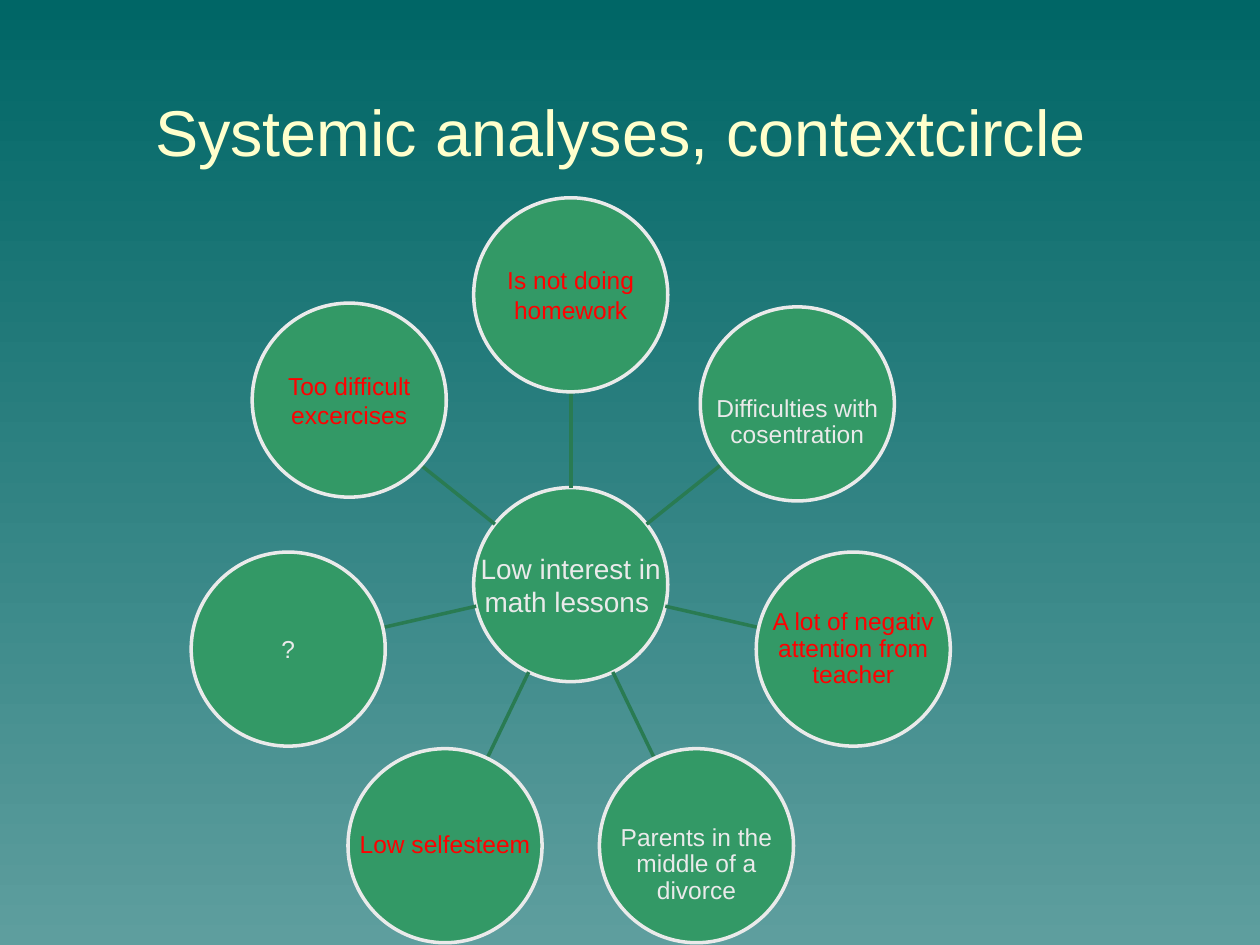
from dataclasses import dataclass
from math import cos, pi, sin

from lxml.etree import SubElement
from pptx import Presentation
from pptx.dml.color import RGBColor
from pptx.enum.shapes import MSO_CONNECTOR, MSO_SHAPE
from pptx.enum.text import MSO_ANCHOR, MSO_AUTO_SIZE, PP_ALIGN
from pptx.oxml.ns import qn
from pptx.util import Inches, Pt


@dataclass(frozen=True)
class Theme:
    font: str = "Arial"
    sky: str = "006666"
    ground: str = "5E9E9E"
    title: str = "FFFFCC"
    circle: str = "339966"
    light: str = "EAEAEA"
    accent: str = "FF0000"
    spoke: str = "297B52"
    title_size: float = 37
    hub_size: float = 16
    topic_size: float = 14
    line_width: float = 2


def assign(target, values):
    for name, value in values.items():
        setattr(target, name, value)


def color(value):
    return RGBColor.from_string(value)


class ContextCircle:
    def __init__(self, page, theme):
        self.page = page
        self.theme = theme

    def background(self):
        fill = self.page.background.fill
        fill.gradient()
        fill.gradient_angle = 270
        for stop, value in zip(fill.gradient_stops, (self.theme.sky, self.theme.ground)):
            stop.color.rgb = color(value)

    def label(self, box, text, size, ink, spacing=1.0, inset=0.01, drop=0):
        margin = Inches(inset)
        assign(box.text_frame, {
            "word_wrap": True,
            "auto_size": MSO_AUTO_SIZE.NONE,
            "vertical_anchor": MSO_ANCHOR.MIDDLE,
            "margin_left": margin,
            "margin_right": margin,
            "margin_top": Inches(inset + drop),
            "margin_bottom": margin,
        })
        para = box.text_frame.paragraphs[0]
        assign(para, {"alignment": PP_ALIGN.CENTER, "line_spacing": spacing})
        span = para.add_run()
        span.text = text
        assign(span.font, {"name": self.theme.font, "size": Pt(size), "bold": False})
        span.font.color.rgb = color(ink)

    def title(self, text, left, top, width, height):
        box = self.page.shapes.title
        assign(box, {
            "left": Inches(left),
            "top": Inches(top),
            "width": Inches(width),
            "height": Inches(height),
        })
        self.label(box, text, self.theme.title_size, self.theme.title)

    def circle(self, center, radius, text, size, ink, **layout):
        x, y = center
        frame = [Inches(value) for value in (x - radius, y - radius, 2 * radius, 2 * radius)]
        disc = self.page.shapes.add_shape(MSO_SHAPE.OVAL, *frame)
        disc.shadow.inherit = False
        disc.fill.solid()
        disc.fill.fore_color.rgb = color(self.theme.circle)
        disc.line.color.rgb = color(self.theme.light)
        disc.line.width = Pt(self.theme.line_width)
        box = self.page.shapes.add_textbox(*frame)
        self.label(box, text, size, ink, **layout)

    def spoke(self, start, end):
        ends = [Inches(value) for value in (*start, *end)]
        line = self.page.shapes.add_connector(MSO_CONNECTOR.STRAIGHT, *ends)
        line.line.color.rgb = color(self.theme.spoke)
        line.line.width = Pt(self.theme.line_width)
        SubElement(line._element.spPr, qn("a:effectLst"))


def around(center, distance, angle):
    return center[0] + distance * sin(angle), center[1] - distance * cos(angle)


def main():
    theme = Theme()
    deck = Presentation()
    assign(deck, {"slide_width": Inches(10), "slide_height": Inches(7.5)})
    chart = ContextCircle(deck.slides.add_slide(deck.slide_layouts[5]), theme)
    chart.background()
    chart.title("Systemic analyses, contextcircle", 0.51, 0.82, 8.83, 0.44)

    hub, radius, orbit = (4.53, 4.64), 0.77, 2.3
    chart.circle(hub, radius, "Low interest in math lessons ", theme.hub_size, theme.light)

    tight = {"spacing": 0.9}
    lowered = {"spacing": 0.9, "drop": 0.3}
    topics = [
        ("Is not doing homework", theme.accent, {}, (0, 0)),
        ("Difficulties with cosentration", theme.light, lowered, (0, 0)),
        ("A lot of negativ attention from teacher", theme.accent, tight, (0, 0)),
        ("Parents in the middle of a divorce", theme.light, lowered, (0, 0)),
        ("Low selfesteem", theme.accent, tight, (0, 0)),
        ("?", theme.light, {}, (0, 0)),
        ("Too difficult excercises", theme.accent, {}, (0.04, -0.03)),
    ]
    for index, (text, ink, layout, (shift_x, shift_y)) in enumerate(topics):
        angle = 2 * pi * index / len(topics)
        x, y = around(hub, orbit, angle)
        chart.spoke(around(hub, radius, angle), around(hub, orbit - radius, angle))
        chart.circle((x + shift_x, y + shift_y), radius, text, theme.topic_size, ink, **layout)

    deck.save("out.pptx")


if __name__ == "__main__":
    main()
